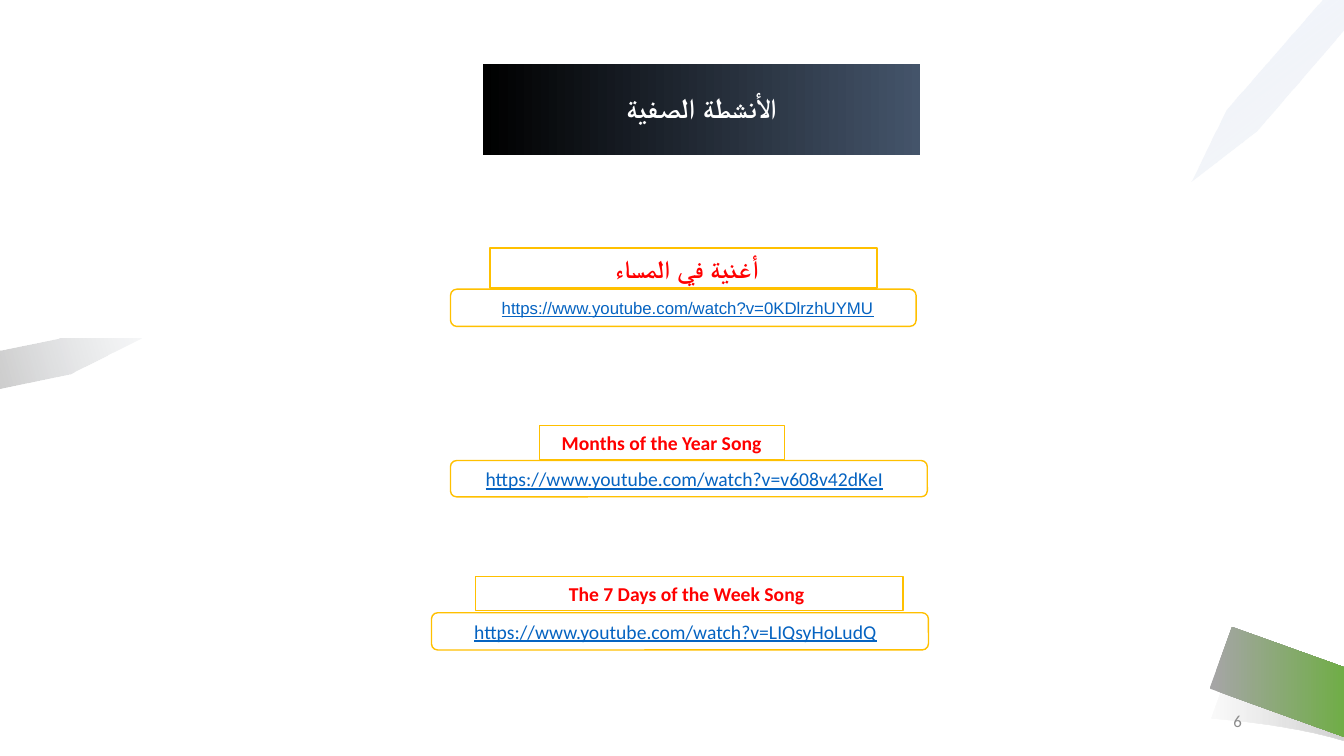
import dataclasses

import pptx
import pptx.dml.color
import pptx.enum.shapes
import pptx.enum.text
import pptx.oxml
import pptx.oxml.ns
import pptx.util

Pt = pptx.util.Pt
ALIGN = pptx.enum.text.PP_ALIGN
ANCHOR = pptx.enum.text.MSO_ANCHOR
SHAPE = pptx.enum.shapes.MSO_SHAPE


@dataclasses.dataclass(frozen=True)
class Theme:
    font: str = "Calibri"
    link_font: str = "Arial"
    white: str = "FFFFFF"
    black: str = "000000"
    slate: str = "44546A"
    grey: str = "A5A5A5"
    green: str = "70AD47"
    blue: str = "4472C4"
    pale: str = "E7E6E6"
    gold: str = "FFC000"
    red: str = "FF0000"
    link: str = "0563C1"
    number: str = "8C8C8C"
    title_size: int = 20
    song_size: int = 18
    text_size: int = 14
    small_size: int = 12


THEME = Theme()


def rgb(value):
    return pptx.dml.color.RGBColor.from_string(value)


def fill_gradient(shape, stops, angle):
    """Fill with (position %, colour, opacity %) stops; angle runs clockwise."""
    shape.fill.gradient()
    shape.fill.gradient_angle = (360 - angle) % 360
    for stop, (position, colour, opacity) in zip(shape.fill.gradient_stops, stops):
        stop.position = position / 100
        stop.color.rgb = rgb(colour)
    colours = shape.element.spPr.findall(".//" + pptx.oxml.ns.qn("a:srgbClr"))
    for colour, (_, _, opacity) in zip(colours, stops):
        if opacity < 100:
            colour.append(pptx.oxml.parse_xml(
                f'<a:alpha {pptx.oxml.ns.nsdecls("a")} val="{opacity * 1000}"/>'))
    shape.line.fill.background()
    shape.shadow.inherit = False


def write(shape, text, size, colour, frame=None, paragraph=None, **font):
    text_frame = shape.text_frame
    line = text_frame.paragraphs[0]
    run = line.add_run()
    run.text = text
    formats = (
        (text_frame, {"word_wrap": True, **(frame or {})}),
        (line, {"alignment": ALIGN.CENTER, **(paragraph or {})}),
        (run.font, {"name": THEME.font, "size": Pt(size), **font}),
    )
    for target, values in formats:
        for name, value in values.items():
            setattr(target, name, value)
    run.font.color.rgb = rgb(colour)


def bezier(start, control1, control2, end, steps=12):
    points = []
    for step in range(steps + 1):
        t = step / steps
        weights = ((1 - t) ** 3, 3 * t * (1 - t) ** 2, 3 * t * t * (1 - t), t ** 3)
        points.append(tuple(
            sum(w * p for w, p in zip(weights, axis))
            for axis in zip(start, control1, control2, end)))
    return points


def add_ornament(slide, box, points, stops, angle):
    """Draw an outline whose points count from the corner of its box."""
    left, top = box
    placed = [(Pt(left + x), Pt(top + y)) for x, y in points]
    builder = slide.shapes.build_freeform(*placed[0], scale=1.0)
    builder.add_line_segments(placed[1:], close=True)
    fill_gradient(builder.convert_to_shape(), stops, angle)


def add_ornaments(slide):
    shadow = (bezier((1.4, 45.4), (1.4, 45.4), (56.2, 49), (95.8, 61.2))
              + bezier((95.8, 13), (51.8, 0.7), (17.3, 1.4), (17.3, 1.4)))
    ribbon = [(96, 29.6), (16, 0.8), (0, 44.8), (96, 79.3)]
    left_pencil = [(101, 1.2), (42, 1.2), (0, 9.8), (0, 37.2), (50.5, 26.6)]
    top_pencil = [(95, 0), (26, 78.5), (1, 129.6), (48, 93.6), (110, 22), (110, 0)]
    ornaments = (
        ((864, 468), shadow, ((3, THEME.grey, 6), (100, THEME.grey, 50)), 0),
        ((864, 447), ribbon, ((3, THEME.grey, 100), (100, THEME.green, 100)), 0),
        ((0, 240.5), left_pencil, ((0, THEME.slate, 5), (100, THEME.black, 20)), 164),
        ((850, 0), top_pencil, ((0, THEME.blue, 5), (100, THEME.pale, 20)), 53),
    )
    for ornament in ornaments:
        add_ornament(slide, *ornament)


def add_title(slide, box, text):
    banner = slide.shapes.add_shape(SHAPE.RECTANGLE, *map(Pt, box))
    fill_gradient(banner, ((0, THEME.slate, 100), (100, THEME.black, 100)), 180)
    write(banner, text, THEME.title_size, THEME.white, bold=True,
          frame={"vertical_anchor": ANCHOR.MIDDLE},
          paragraph={"line_spacing": 0.9})


def add_frame(slide, kind, box):
    frame = slide.shapes.add_shape(kind, *map(Pt, box))
    frame.fill.solid()
    frame.fill.fore_color.rgb = rgb(THEME.white)
    frame.line.color.rgb = rgb(THEME.gold)
    frame.line.width = Pt(1)
    frame.shadow.inherit = False
    return frame


def add_song(slide, box, heading, link):
    """Stack a heading frame, inset in the box, on a rounded link frame."""
    left, top, width, link_top, link_height = box
    name, inset, name_width, name_height, name_size, name_margins = heading
    address, address_size, address_font, address_margins = link
    name_frame = add_frame(slide, SHAPE.RECTANGLE,
                           (left + inset, top, name_width, name_height))
    write(name_frame, name, name_size, THEME.red, bold=True,
          frame={"vertical_anchor": ANCHOR.TOP, **name_margins})
    link_frame = add_frame(slide, SHAPE.ROUNDED_RECTANGLE,
                           (left, top + link_top, width, link_height))
    write(link_frame, address, address_size, THEME.link,
          name=address_font, underline=True,
          frame={"vertical_anchor": ANCHOR.MIDDLE, **address_margins})


def add_songs(slide):
    text, font = THEME.text_size, THEME.font
    wide_left = {"margin_left": Pt(13.5)}
    wide_right = {"margin_right": Pt(13.5)}
    songs = (
        ((321.8, 177.1, 332.6, 29.5, 26.6),
         ("أغنية في المساء", 28.1, 276.5, 28.8, THEME.song_size, {"margin_left": Pt(11)}),
         ("https://www.youtube.com/watch?v=0KDlrzhUYMU",
          THEME.small_size, THEME.link_font, wide_left)),
        ((321.8, 304, 340.6, 25, 25.9),
         ("Months of the Year Song", 63.4, 175, 24.5, text, {}),
         ("https://www.youtube.com/watch?v=v608v42dKeI", text, font, wide_right)),
        ((308.2, 411.8, 355, 25.9, 26.6),
         ("The 7 Days of the Week Song", 31.6, 305.3, 24.5, text,
          {"margin_right": Pt(11)}),
         ("https://www.youtube.com/watch?v=LIQsyHoLudQ", text, font, wide_right)),
    )
    for song in songs:
        add_song(slide, *song)


def add_page_number(slide, box, number):
    page = slide.shapes.add_textbox(*map(Pt, box))
    write(page, number, THEME.small_size, THEME.number,
          frame={"vertical_anchor": ANCHOR.MIDDLE},
          paragraph={"alignment": ALIGN.RIGHT})


def main():
    deck = pptx.Presentation()
    deck.slide_width, deck.slide_height = Pt(960), Pt(540)
    slide = deck.slides.add_slide(deck.slide_layouts[6])
    add_ornaments(slide)
    add_title(slide, (344.9, 45.4, 312.5, 65.5), "الأنشطة الصفية")
    add_page_number(slide, (678.2, 500.4, 216, 28.8), "6")
    add_songs(slide)
    deck.save("out.pptx")


if __name__ == "__main__":
    main()
